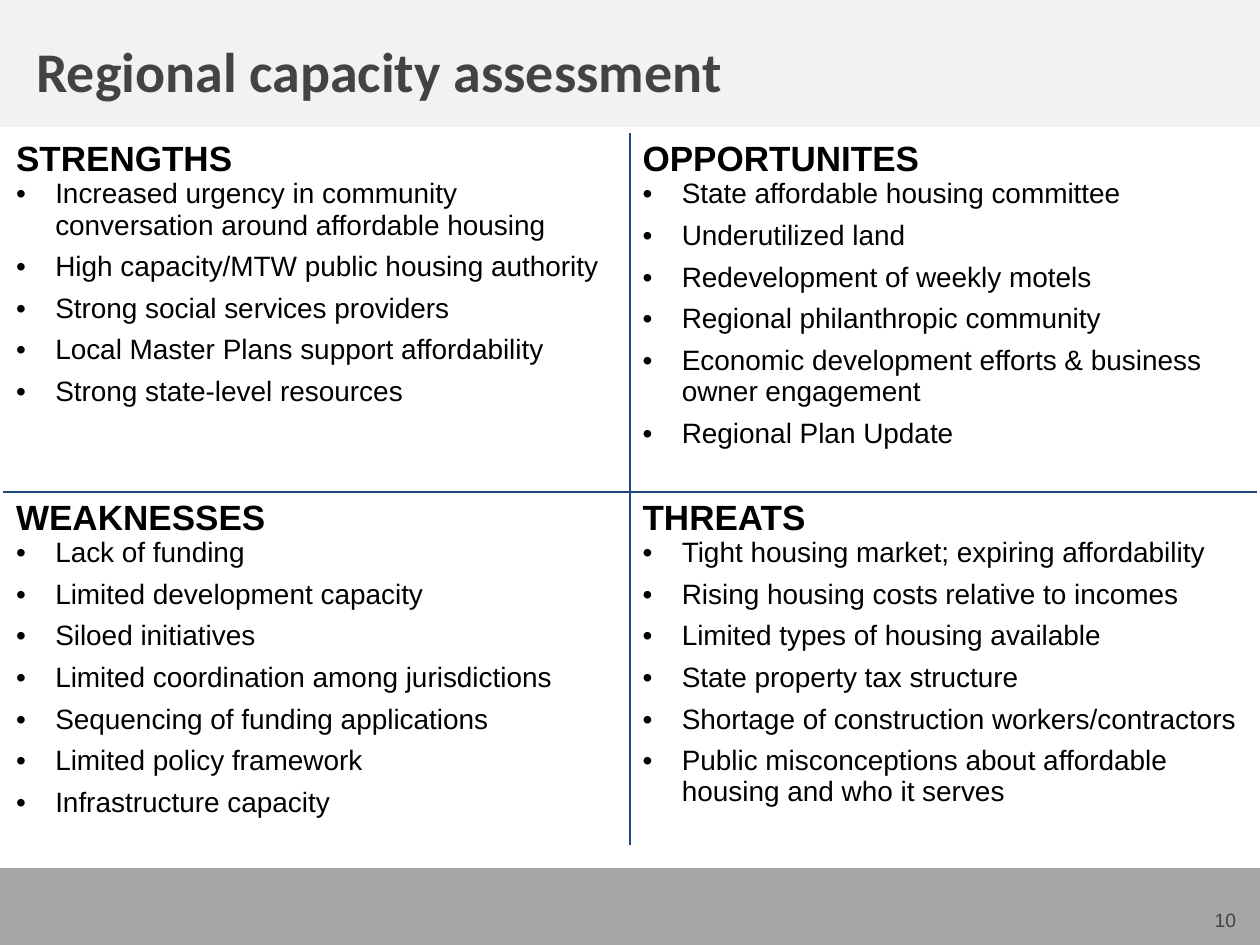
from lxml import etree
from pptx import Presentation
from pptx.dml.color import RGBColor
from pptx.enum.shapes import MSO_SHAPE
from pptx.enum.text import MSO_ANCHOR, PP_ALIGN
from pptx.oxml.ns import qn
from pptx.util import Cm, Pt

RECTANGLE = MSO_SHAPE.RECTANGLE
TOP, BOTTOM = MSO_ANCHOR.TOP, MSO_ANCHOR.BOTTOM
LEFT, RIGHT = PP_ALIGN.LEFT, PP_ALIGN.RIGHT

BLACK = RGBColor(0x00, 0x00, 0x00)
WHITE = RGBColor(0xFF, 0xFF, 0xFF)
CHARCOAL = RGBColor(0x42, 0x43, 0x42)
HEADER_GREY = RGBColor(0xF2, 0xF2, 0xF2)
FOOTER_GREY = RGBColor(0xA6, 0xA6, 0xA6)
NAVY = RGBColor(0x1F, 0x49, 0x7D)

TITLE = "Regional capacity assessment"
PAGE_NUMBER = "10"
QUADRANTS = [
    [
        ("STRENGTHS", [
            "Increased urgency in community conversation around affordable housing",
            "High capacity/MTW public housing authority",
            "Strong social services providers",
            "Local Master Plans support affordability",
            "Strong state-level resources",
        ]),
        ("OPPORTUNITES", [
            "State affordable housing committee",
            "Underutilized land",
            "Redevelopment of weekly motels",
            "Regional philanthropic community",
            "Economic development efforts & business owner engagement",
            "Regional Plan Update",
        ]),
    ],
    [
        ("WEAKNESSES", [
            "Lack of funding",
            "Limited development capacity",
            "Siloed initiatives",
            "Limited coordination among jurisdictions",
            "Sequencing of funding applications",
            "Limited policy framework",
            "Infrastructure capacity",
        ]),
        ("THREATS", [
            "Tight housing market; expiring affordability",
            "Rising housing costs relative to incomes",
            "Limited types of housing available",
            "State property tax structure",
            "Shortage of construction workers/contractors",
            "Public misconceptions about affordable housing and who it serves",
        ]),
    ],
]

TITLE_FONT = {"name": "Calibri", "size": Pt(32), "bold": True}
NUMBER_FONT = {"name": "Arial", "size": Pt(11), "bold": False}
HEADING_FONT = {"name": "Arial", "size": Pt(20), "bold": True}
ITEM_FONT = {"name": "Arial", "size": Pt(16), "bold": False}

SLIDE_WIDTH, SLIDE_HEIGHT = Cm(25.4), Cm(19.05)
HEADER_HEIGHT, FOOTER_HEIGHT = Cm(2.56), Cm(1.55)
TABLE_LEFT, TABLE_TOP = Cm(0.07), Cm(2.69)
COLUMN_WIDTH = Cm(12.63)
ROW_HEIGHTS = [Cm(7.23), Cm(7.12)]
BULLET_INDENT = Cm(0.79)
PLAIN_TABLE_STYLE = "{2D5ABB26-0587-4C30-8999-92F81FD0307C}"


def style(paragraph, font_values, color):
    for name, value in font_values.items():
        setattr(paragraph.font, name, value)
    paragraph.font.color.rgb = color


def add_band(slide, top, height, color):
    band = slide.shapes.add_shape(RECTANGLE, 0, top, SLIDE_WIDTH, height)
    band.shadow.inherit = False
    band.fill.solid()
    band.fill.fore_color.rgb = color
    band.line.fill.background()


def add_label(slide, bounds, text, font_values, align, anchor):
    frame = slide.shapes.add_textbox(*bounds).text_frame
    frame_values = {"word_wrap": True, "vertical_anchor": anchor, "margin_left": 0,
                    "margin_top": 0, "margin_right": 0, "margin_bottom": 0}
    for name, value in frame_values.items():
        setattr(frame, name, value)
    paragraph = frame.paragraphs[0]
    paragraph.text = text
    paragraph.alignment = align
    style(paragraph, font_values, CHARCOAL)


def add_bullet(paragraph):
    properties = paragraph._p.get_or_add_pPr()
    properties.set("marL", str(BULLET_INDENT))
    properties.set("indent", str(-BULLET_INDENT))
    etree.SubElement(properties, qn("a:buFont"), typeface="Arial")
    etree.SubElement(properties, qn("a:buChar"), char="•")


def add_border(cell, side):
    line = etree.SubElement(cell._tc.get_or_add_tcPr(), qn(f"a:{side}"), w=str(Pt(1)))
    fill = etree.SubElement(line, qn("a:solidFill"))
    etree.SubElement(fill, qn("a:srgbClr"), val=str(NAVY))


def fill_quadrant(cell, heading, items):
    frame = cell.text_frame
    frame.paragraphs[0].text = heading
    style(frame.paragraphs[0], HEADING_FONT, BLACK)
    for item in items:
        paragraph = frame.add_paragraph()
        paragraph.text = item
        add_bullet(paragraph)
        paragraph.space_after = Pt(6)
        style(paragraph, ITEM_FONT, BLACK)


def add_quadrant_table(slide):
    frame = slide.shapes.add_table(2, 2, TABLE_LEFT, TABLE_TOP,
                                   2 * COLUMN_WIDTH, sum(ROW_HEIGHTS))
    table = frame.table
    table.first_row = table.horz_banding = False
    table._tbl.tblPr.find(qn("a:tableStyleId")).text = PLAIN_TABLE_STYLE
    for column in table.columns:
        column.width = COLUMN_WIDTH
    for row, height in zip(table.rows, ROW_HEIGHTS):
        row.height = height
    for r, quadrant_row in enumerate(QUADRANTS):
        for c, (heading, items) in enumerate(quadrant_row):
            cell = table.cell(r, c)
            add_border(cell, ("lnR", "lnL")[c])
            add_border(cell, ("lnB", "lnT")[r])
            cell.fill.solid()
            cell.fill.fore_color.rgb = WHITE
            fill_quadrant(cell, heading, items)


def main():
    presentation = Presentation()
    presentation.slide_width, presentation.slide_height = SLIDE_WIDTH, SLIDE_HEIGHT
    slide = presentation.slides.add_slide(presentation.slide_layouts[6])
    add_band(slide, SLIDE_HEIGHT - FOOTER_HEIGHT, FOOTER_HEIGHT, FOOTER_GREY)
    add_band(slide, 0, HEADER_HEIGHT, HEADER_GREY)
    add_quadrant_table(slide)
    add_label(slide, (Cm(19), Cm(17.75), Cm(5.92), Cm(1.02)),
              PAGE_NUMBER, NUMBER_FONT, RIGHT, BOTTOM)
    add_label(slide, (Cm(0.73), Cm(0.73), Cm(21.72), Cm(1.37)),
              TITLE, TITLE_FONT, LEFT, TOP)
    presentation.save("out.pptx")


if __name__ == "__main__":
    main()
